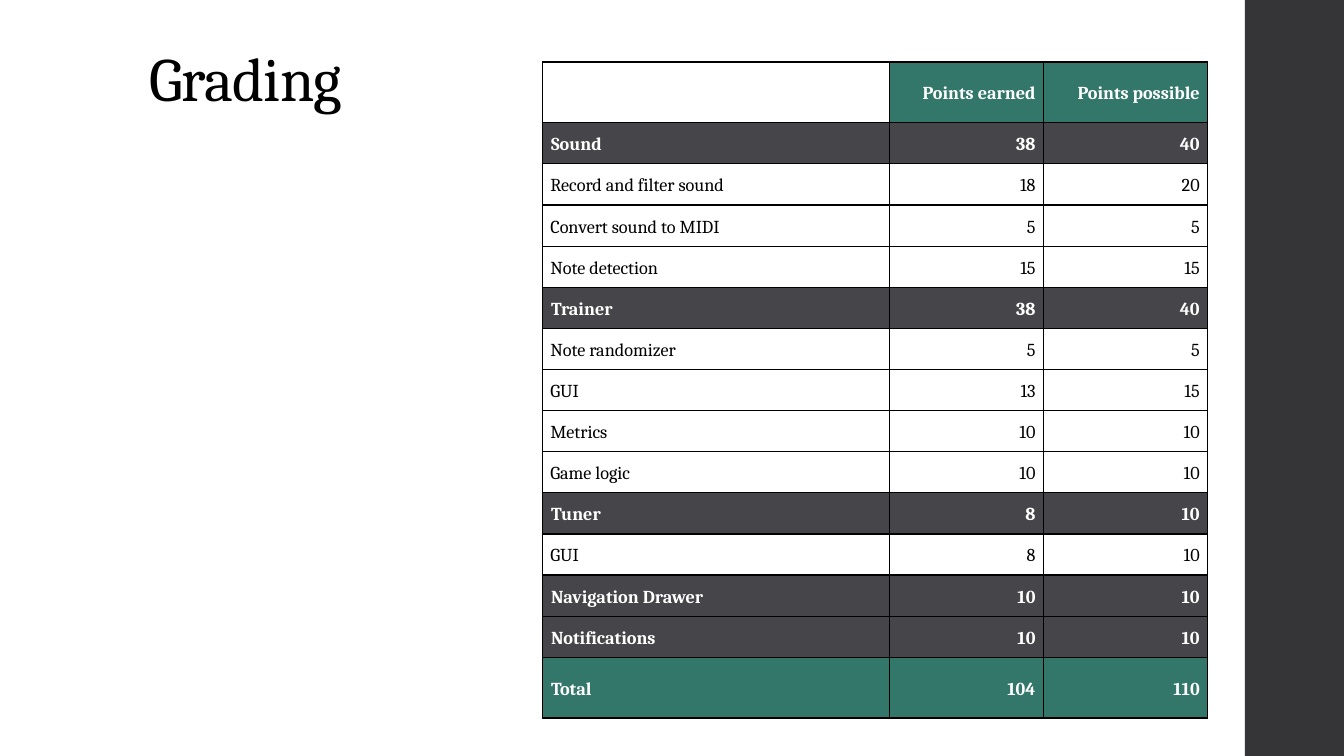
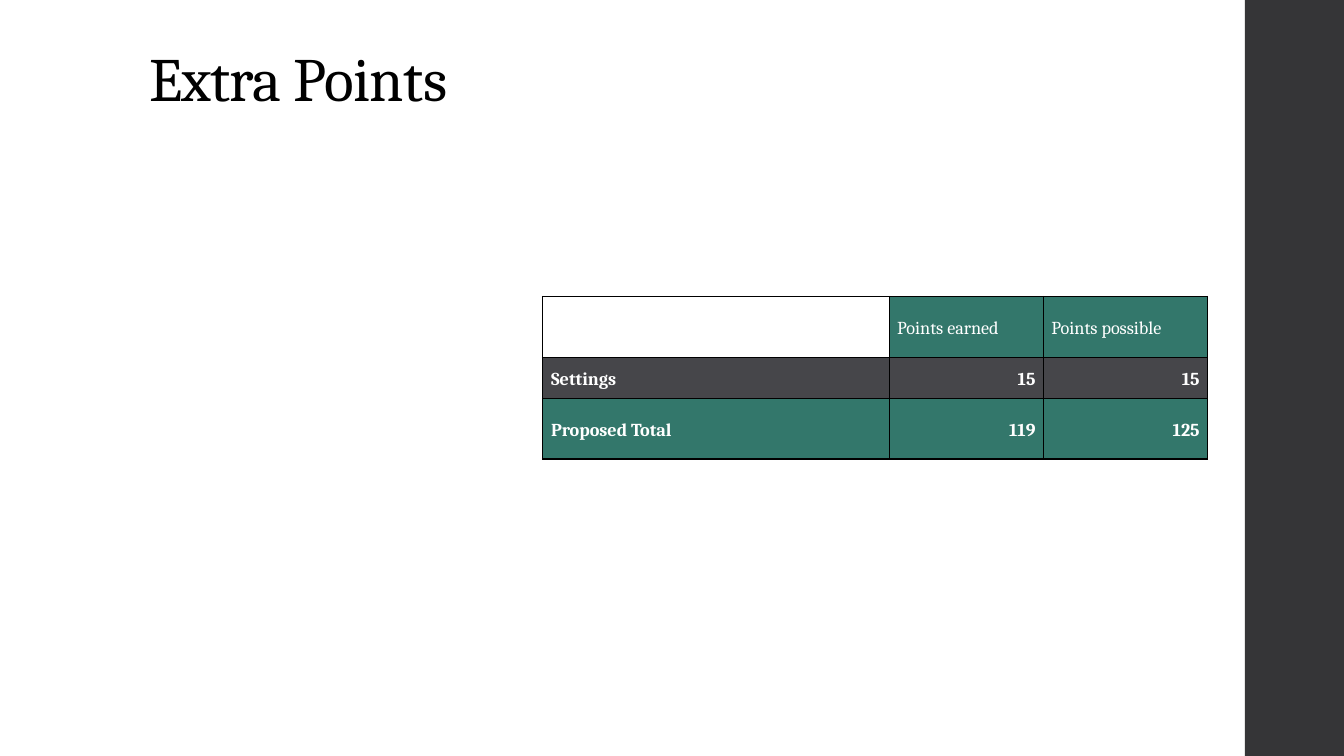
"""Build the two grading slides, each with a title, a side band and a points table."""
from lxml.etree import SubElement
from pptx import Presentation
from pptx.dml.color import RGBColor
from pptx.enum.shapes import MSO_SHAPE
from pptx.enum.text import MSO_ANCHOR, PP_ALIGN
from pptx.oxml.ns import qn
from pptx.util import Pt

COLORS = {
    "band": "353537",
    "black": "000000",
    "white": "FFFFFF",
    "green": "33776B",
    "gray": "46464A",
}
FONT = "Cambria"
COLUMN_WIDTHS = [247.7, 110.2, 117.3]
ROW_HEIGHTS = {"header": 43.4, "section": 28.8, "item": 28.8, "total": 43.4}
ROW_FILLS = {"header": "green", "section": "gray", "item": "white", "total": "green"}
HEADER = ("header", "", "Points earned", "Points possible")

SLIDES = [
    {
        "title": "Grading",
        "top": 44.3,
        "header_bold": True,
        "header_align": PP_ALIGN.RIGHT,
        "rows": [
            HEADER,
            ("section", "Sound", "38", "40"),
            ("item", "Record and filter sound", "18", "20"),
            ("item", "Convert sound to MIDI", "5", "5"),
            ("item", "Note detection", "15", "15"),
            ("section", "Trainer", "38", "40"),
            ("item", "Note randomizer", "5", "5"),
            ("item", "GUI", "13", "15"),
            ("item", "Metrics", "10", "10"),
            ("item", "Game logic", "10", "10"),
            ("section", "Tuner", "8", "10"),
            ("item", "GUI", "8", "10"),
            ("section", "Navigation Drawer", "10", "10"),
            ("section", "Notifications", "10", "10"),
            ("total", "Total", "104", "110"),
        ],
    },
    {
        "title": "Extra Points",
        "top": 211.7,
        "header_bold": False,
        "header_align": PP_ALIGN.LEFT,
        "rows": [
            HEADER,
            ("section", "Settings", "15", "15"),
            ("total", "Proposed Total", "119", "125"),
        ],
    },
]


def add_run(paragraph, text, size, color, bold=False):
    run = paragraph.add_run()
    run.text = text
    run.font.name = FONT
    run.font.size = Pt(size)
    run.font.bold = bold
    run.font.color.rgb = RGBColor.from_string(COLORS[color])
    return run


def style_cell(cell, fill):
    properties = cell._tc.get_or_add_tcPr()
    for side in ("a:lnL", "a:lnR", "a:lnT", "a:lnB"):
        line = SubElement(properties, qn(side), w=str(Pt(1)))
        solid = SubElement(line, qn("a:solidFill"))
        SubElement(solid, qn("a:srgbClr"), val=COLORS["black"])
    cell.fill.solid()
    cell.fill.fore_color.rgb = RGBColor.from_string(COLORS[fill])


presentation = Presentation()
presentation.slide_width = Pt(960)
presentation.slide_height = Pt(540)

for content in SLIDES:
    slide = presentation.slides.add_slide(presentation.slide_layouts[6])

    band = slide.shapes.add_shape(MSO_SHAPE.RECTANGLE, Pt(889.2), Pt(0), Pt(70.8), Pt(540))
    band.shadow.inherit = False
    band.fill.solid()
    band.fill.fore_color.rgb = RGBColor.from_string(COLORS["band"])
    band.line.fill.background()

    title = slide.shapes.add_textbox(Pt(99.4), Pt(28.8), Pt(763.2), Pt(56.9))
    title.text_frame.word_wrap = True
    title.text_frame.vertical_anchor = MSO_ANCHOR.BOTTOM
    paragraph = title.text_frame.paragraphs[0]
    paragraph.line_spacing = 0.9
    run = add_run(paragraph, content["title"], 44, "black")
    run.font._element.set("spc", "-50")

    rows = content["rows"]
    heights = [ROW_HEIGHTS[row[0]] for row in rows]
    table = slide.shapes.add_table(
        len(rows), len(COLUMN_WIDTHS),
        Pt(387.4), Pt(content["top"]), Pt(sum(COLUMN_WIDTHS)), Pt(sum(heights)),
    ).table
    table.first_row = False
    table.horz_banding = False
    for column, width in zip(table.columns, COLUMN_WIDTHS):
        column.width = Pt(width)

    for row_index, (kind, *texts) in enumerate(rows):
        table.rows[row_index].height = Pt(heights[row_index])
        for column_index, text in enumerate(texts):
            cell = table.cell(row_index, column_index)
            style_cell(cell, ROW_FILLS[kind] if text else "white")
            if not text:
                continue
            is_label = column_index == 0
            is_strong_label = is_label and kind != "item"
            cell.vertical_anchor = MSO_ANCHOR.MIDDLE
            cell.margin_left = cell.margin_right = Pt(6.2 if is_strong_label else 5.7)
            cell.margin_top = cell.margin_bottom = Pt(0 if is_strong_label else 5.7)
            paragraph = cell.text_frame.paragraphs[0]
            paragraph.line_spacing = 1.15
            if kind == "header":
                paragraph.alignment = content["header_align"]
                bold = content["header_bold"]
            else:
                paragraph.alignment = PP_ALIGN.LEFT if is_label else PP_ALIGN.RIGHT
                bold = kind != "item"
            add_run(paragraph, text, 13, "black" if kind == "item" else "white", bold)

presentation.save("out.pptx")
